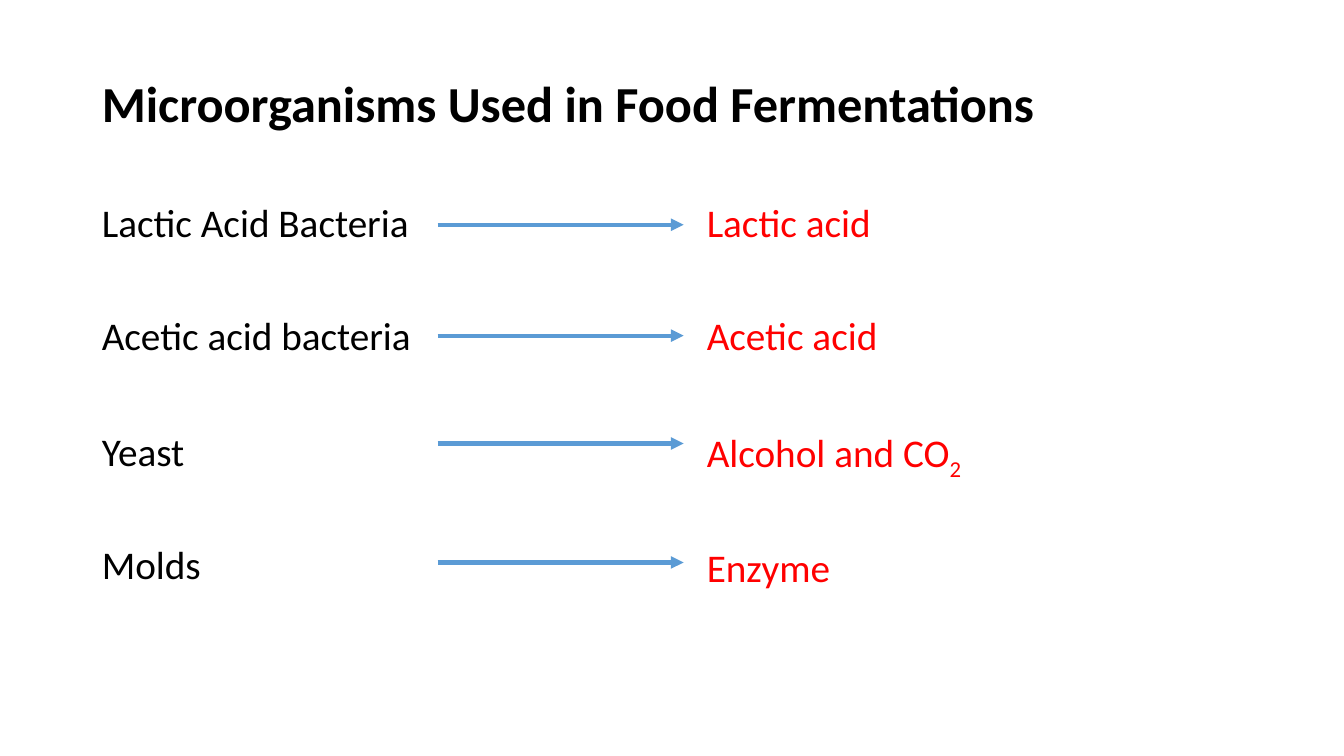
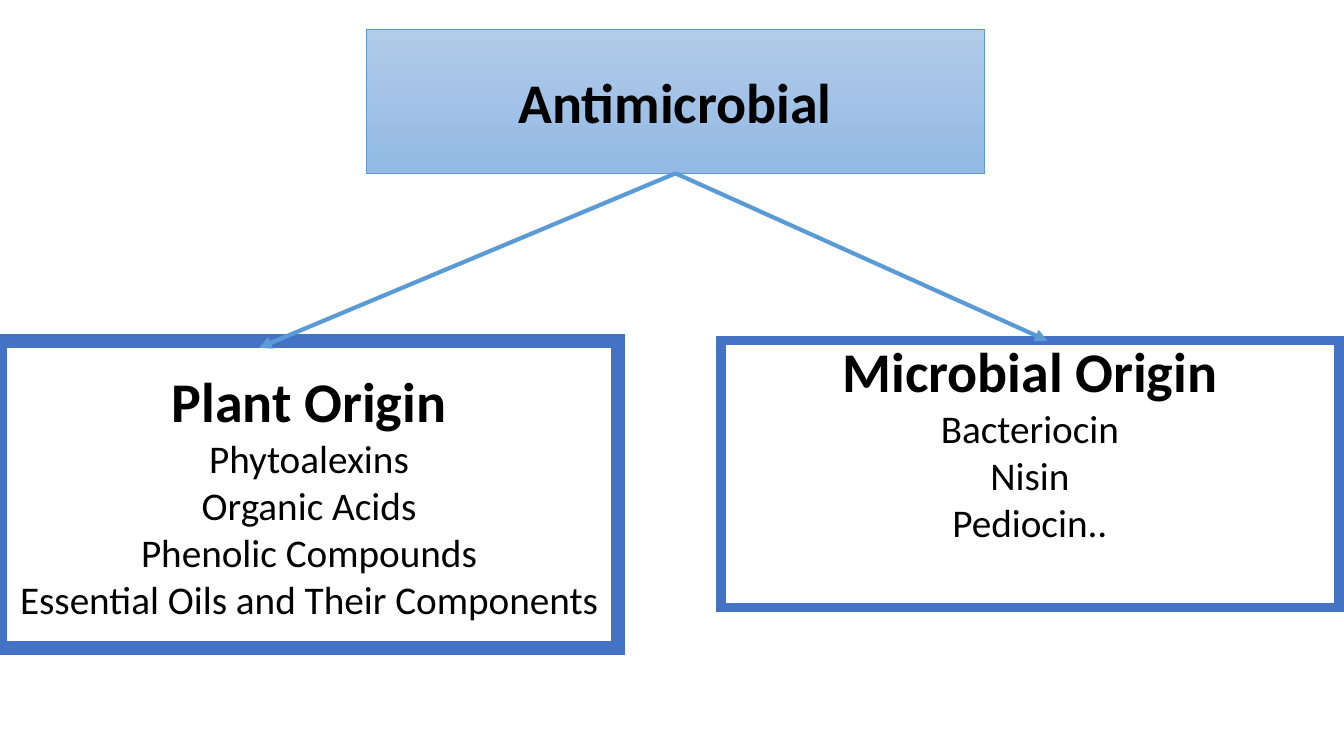
from pptx import Presentation
from pptx.dml.color import RGBColor
from pptx.enum.shapes import MSO_CONNECTOR, MSO_SHAPE
from pptx.enum.text import MSO_ANCHOR, MSO_AUTO_SIZE, PP_ALIGN
from pptx.oxml.ns import qn
from pptx.util import Inches, Pt
from lxml.etree import SubElement

# Shared style
COLORS = {"text": "000000", "product": "FF0000", "arrow": "5B9BD5",
          "frame": "4472C4", "paper": "FFFFFF",
          "grad_top": "B1CBE9", "grad_end": "93B9E4"}
BODY = {"name": "Calibri", "size": Pt(28), "bold": False}
HEADING = {**BODY, "size": Pt(40), "bold": True}
TITLE = {**HEADING, "size": Pt(36)}

# Slide 1: microbe, product, subscript, arrow height
FERMENT_TITLE = "Microorganisms Used in Food Fermentations"
FERMENTS = [
    ("Lactic Acid Bacteria", "Lactic acid", "", 2.23),
    ("Acetic acid bacteria", "Acetic acid", "", 3.33),
    ("Yeast", "Alcohol and CO", "2", 4.4),
    ("Molds", "Enzyme", "", 5.58),
]
TITLE_BOX = (0.91, 0.73, 11.5, 0.8)
MICROBE_BOX = (0.91, 1.97, 3.4, 4.77)
PRODUCT_BOX = (6.91, 1.97, 5.5, 4.77)
ARROW_X = (4.34, 6.78)
ROW_GAP = 50.4
SUBSCRIPT_DROP = 2  # points a subscript adds to its line

# Slide 2
ROOT = "Antimicrobial"
ROOT_BOX = (3.63, 0.29, 6.13, 1.43)
ROOT_FOOT = (6.7, 1.72)
ORIGINS = [
    {"heading": "Plant Origin",
     "items": ["Phytoalexins", "Organic Acids", "Phenolic Compounds",
               "Essential Oils and Their Components"],
     "box": (0, 3.38, 6.13, 3.05), "border": 10,
     "insets": (0.05, 0.05), "arrow_to": (2.57, 3.45)},
    {"heading": "Microbial Origin",
     "items": ["Bacteriocin", "Nisin", "Pediocin.."],
     "box": (7.15, 3.38, 6.13, 2.65), "border": 6.75,
     "insets": (0, 0.66), "arrow_to": (10.39, 3.38)},
]


def rgb(key):
    return RGBColor.from_string(COLORS[key])


def place(sp, box, anchor):
    sp.left, sp.top, sp.width, sp.height = map(Inches, box)
    tf = sp.text_frame
    tf.word_wrap, tf.auto_size = True, MSO_AUTO_SIZE.NONE
    tf.vertical_anchor = anchor
    return tf


def paragraph(tf, i, align=PP_ALIGN.LEFT, spacing=1.0, before=0):
    p = tf.add_paragraph() if i else tf.paragraphs[0]
    p.alignment, p.line_spacing, p.space_before = align, spacing, Pt(before)
    return p


def list_row(tf, i, before):
    p = paragraph(tf, i, spacing=0.9, before=before)
    pPr = p._p.get_or_add_pPr()
    pPr.set("marL", "0")
    pPr.set("indent", "0")
    SubElement(pPr, qn("a:buNone"))
    return p


def add_run(p, text, style, color="text"):
    r = p.add_run()
    r.text = text
    for name, value in style.items():
        setattr(r.font, name, value)
    r.font.color.rgb = rgb(color)
    return r


def set_line(line, color, width):
    line.color.rgb, line.width = rgb(color), Pt(width)
    ln = line._get_or_add_ln()
    SubElement(ln, qn("a:miter"), lim="800000")
    return ln


def add_arrow(s, start, end):
    c = s.shapes.add_connector(MSO_CONNECTOR.STRAIGHT,
                               *map(Inches, (*start, *end)))
    ln = set_line(c.line, "arrow", 3)
    SubElement(ln, qn("a:tailEnd"), type="triangle")
    SubElement(c._element.spPr, qn("a:effectLst"))


def ferment_slide(prs):
    s = prs.slides.add_slide(prs.slide_layouts[3])
    tf = place(s.shapes.title, TITLE_BOX, MSO_ANCHOR.TOP)
    add_run(paragraph(tf, 0, spacing=0.9), FERMENT_TITLE, TITLE)

    # Microbes on the left, their products on the right
    microbes = place(s.placeholders[1], MICROBE_BOX, MSO_ANCHOR.TOP)
    products = place(s.placeholders[2], PRODUCT_BOX, MSO_ANCHOR.TOP)
    for i, (microbe, product, sub, y) in enumerate(FERMENTS):
        gap = ROW_GAP if i else 0
        drop = SUBSCRIPT_DROP if sub else 0
        add_run(list_row(microbes, i, gap + drop), microbe, BODY)
        p = list_row(products, i, gap)
        add_run(p, product, BODY, "product")
        if sub:
            r = add_run(p, sub, BODY, "product")
            r.font._element.set("baseline", "-25000")
        add_arrow(s, (ARROW_X[0], y), (ARROW_X[1], y))


def origin_slide(prs):
    s = prs.slides.add_slide(prs.slide_layouts[5])
    root = s.shapes.title
    tf = place(root, ROOT_BOX, MSO_ANCHOR.MIDDLE)
    add_run(paragraph(tf, 0, PP_ALIGN.CENTER), ROOT, HEADING)
    root.fill.gradient()
    root.fill.gradient_angle = 270
    for stop, key in zip(root.fill.gradient_stops, ("grad_top", "grad_end")):
        stop.color.rgb = rgb(key)
    set_line(root.line, "arrow", 0.5)

    # Framed lists, each reached by an arrow from the root
    for origin in ORIGINS:
        sp = s.shapes.add_shape(MSO_SHAPE.RECTANGLE,
                                *map(Inches, origin["box"]))
        sp.shadow.inherit = False
        sp.fill.solid()
        sp.fill.fore_color.rgb = rgb("paper")
        set_line(sp.line, "frame", origin["border"])
        tf = place(sp, origin["box"], MSO_ANCHOR.MIDDLE)
        tf.margin_top, tf.margin_bottom = map(Inches, origin["insets"])
        for i, text in enumerate([origin["heading"], *origin["items"]]):
            add_run(paragraph(tf, i, PP_ALIGN.CENTER), text,
                    BODY if i else HEADING)
    for origin in ORIGINS:
        add_arrow(s, ROOT_FOOT, origin["arrow_to"])


def main():
    prs = Presentation()
    prs.slide_width, prs.slide_height = Inches(13.33), Inches(7.5)
    ferment_slide(prs)
    origin_slide(prs)
    prs.save("out.pptx")


if __name__ == "__main__":
    main()
